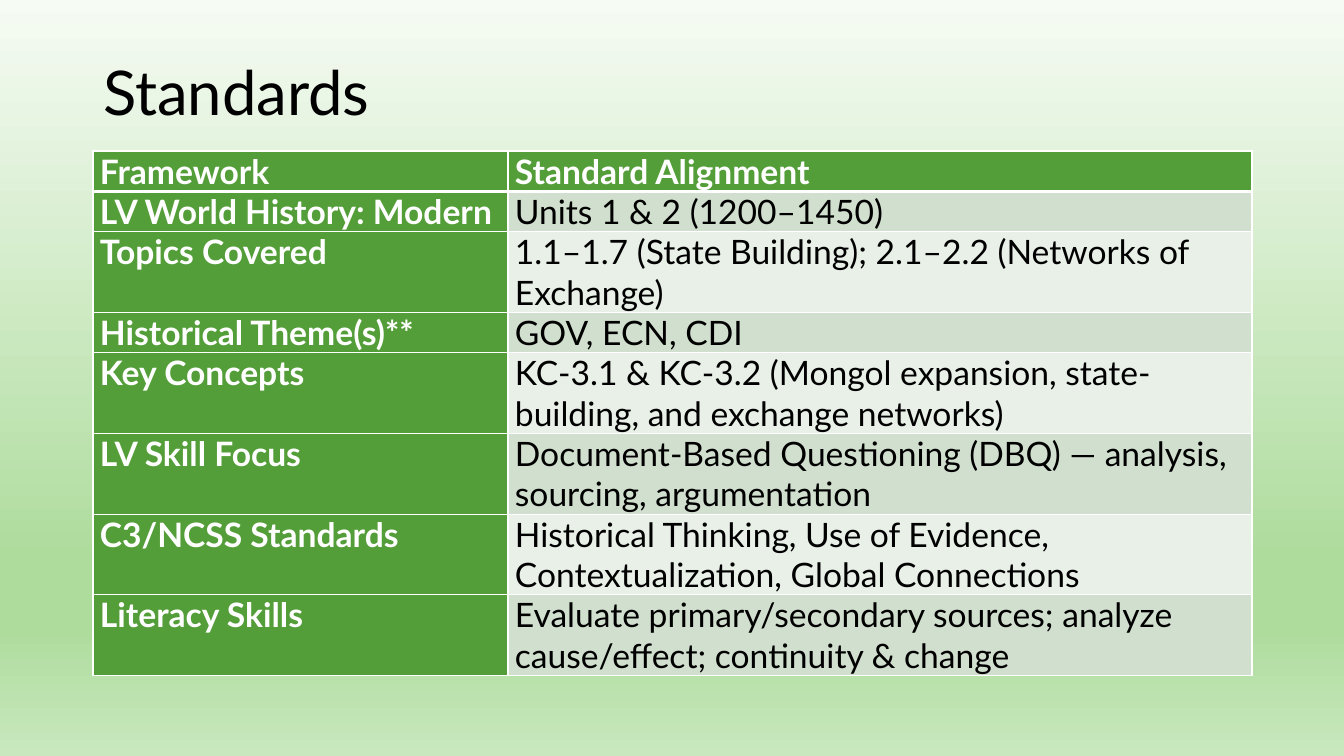
from dataclasses import dataclass

from pptx import Presentation
from pptx.dml.color import RGBColor
from pptx.enum.text import MSO_ANCHOR, MSO_AUTO_SIZE, PP_ALIGN
from pptx.oxml import parse_xml
from pptx.oxml.ns import nsdecls
from pptx.util import Emu, Pt

LEFT = PP_ALIGN.LEFT
MIDDLE = MSO_ANCHOR.MIDDLE
NO_AUTOFIT = MSO_AUTO_SIZE.NONE
TITLE_ONLY_LAYOUT = 5
EMU_PER_PX = 914400 / 100.8


@dataclass(frozen=True)
class Theme:
    font: str = "Lato"
    title_size: int = 44
    table_size: int = 24
    text: str = "000000"
    heading_text: str = "FFFFFF"
    heading_fill: str = "549E39"
    bands: tuple = ("D1DFCE", "E9F0E8")
    border: str = "FFFFFF"
    border_width: int = 1
    header_rule_width: int = 3
    backdrop: tuple = ((0, "F6FBF4"), (74, "AEDC9D"), (83, "AEDC9D"), (100, "C9E8BE"))


THEME = Theme()

LINE_HEIGHT = 40
COLUMN_WIDTHS = (415, 744)
# Framework, alignment, number of text lines in the row
STANDARDS = (
    ("Framework", "Standard Alignment", 1),
    ("LV World History: Modern", "Units 1 & 2 (1200–1450)", 1),
    ("Topics Covered", "1.1–1.7 (State Building); 2.1–2.2 (Networks of Exchange)", 2),
    ("Historical Theme(s)**", "GOV, ECN, CDI", 1),
    ("Key Concepts",
     "KC-3.1 & KC-3.2 (Mongol expansion, state-building, and exchange networks)", 2),
    ("LV Skill Focus",
     "Document-Based Questioning (DBQ) — analysis, sourcing, argumentation", 2),
    ("C3/NCSS Standards",
     "Historical Thinking, Use of Evidence, Contextualization, Global Connections", 2),
    ("Literacy Skills",
     "Evaluate primary/secondary sources; analyze cause/effect; continuity & change", 2),
)


def px(length):
    return Emu(round(length * EMU_PER_PX))


def add_run(paragraph, text, size, color, bold=False):
    run = paragraph.add_run()
    run.text = text
    run.font.name = THEME.font
    run.font.size = Pt(size)
    run.font.bold = bold
    run.font.color.rgb = RGBColor.from_string(color)


def paint_backdrop(slide):
    """Fill the slide with the theme's top-to-bottom gradient."""
    stops = "".join(
        f'<a:gs pos="{percent * 1000}"><a:srgbClr val="{color}"/></a:gs>'
        for percent, color in THEME.backdrop
    )
    slide.element.cSld.insert(0, parse_xml(
        f'<p:bg {nsdecls("p", "a")}><p:bgPr><a:gradFill rotWithShape="1">'
        f'<a:gsLst>{stops}</a:gsLst><a:lin ang="5400000" scaled="0"/></a:gradFill>'
        '<a:effectLst/></p:bgPr></p:bg>'
    ))


def set_title(slide, text):
    title = slide.shapes.title
    title.left, title.top, title.width, title.height = px(93), px(40), px(1159), px(111)
    frame = title.text_frame
    frame.auto_size = NO_AUTOFIT
    frame.vertical_anchor = MIDDLE
    paragraph = frame.paragraphs[0]
    paragraph.alignment = LEFT
    paragraph.line_spacing = 0.9
    add_run(paragraph, text, THEME.title_size, THEME.text)


def set_borders(cell, bottom_width):
    widths = {side: THEME.border_width for side in "LRT"} | {"B": bottom_width}
    properties = cell._tc.get_or_add_tcPr()
    for side, width in widths.items():
        properties.append(parse_xml(
            f'<a:ln{side} {nsdecls("a")} w="{Pt(width)}"><a:solidFill>'
            f'<a:srgbClr val="{THEME.border}"/></a:solidFill></a:ln{side}>'
        ))


def fill_cell(cell, text, row, column):
    is_heading = row == 0 or column == 0
    fill = THEME.heading_fill if is_heading else THEME.bands[(row - 1) % 2]
    color = THEME.heading_text if is_heading else THEME.text
    set_borders(cell, THEME.header_rule_width if row == 0 else THEME.border_width)
    cell.fill.solid()
    cell.fill.fore_color.rgb = RGBColor.from_string(fill)
    cell.margin_left = cell.margin_right = px(7)
    cell.margin_top = cell.margin_bottom = 0
    add_run(cell.text_frame.paragraphs[0], text, THEME.table_size, color, is_heading)


def add_standards_table(slide):
    line_count = sum(lines for *_, lines in STANDARDS)
    table = slide.shapes.add_table(
        len(STANDARDS), len(COLUMN_WIDTHS), px(93), px(151),
        px(sum(COLUMN_WIDTHS)), px(line_count * LINE_HEIGHT),
    ).table
    for column, width in zip(table.columns, COLUMN_WIDTHS):
        column.width = px(width)
    for row, (framework, alignment, lines) in enumerate(STANDARDS):
        table.rows[row].height = px(lines * LINE_HEIGHT)
        for column, text in enumerate((framework, alignment)):
            fill_cell(table.cell(row, column), text, row, column)


def main():
    deck = Presentation()
    deck.slide_width, deck.slide_height = px(1344), px(756)
    slide = deck.slides.add_slide(deck.slide_layouts[TITLE_ONLY_LAYOUT])
    paint_backdrop(slide)
    set_title(slide, "Standards")
    add_standards_table(slide)
    deck.save("out.pptx")


if __name__ == "__main__":
    main()
